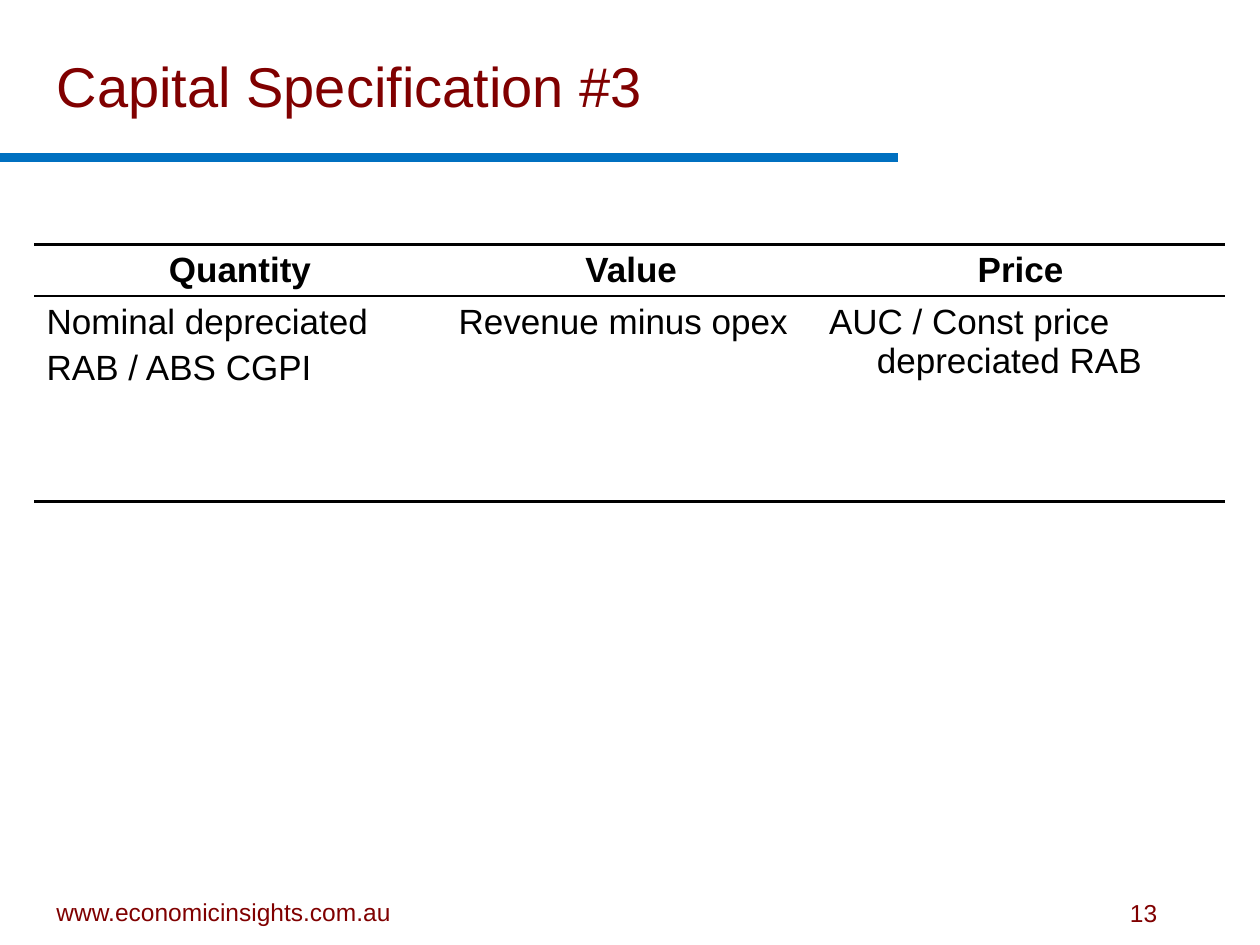
from lxml.etree import SubElement
from pptx import Presentation
from pptx.dml.color import RGBColor
from pptx.enum.shapes import MSO_CONNECTOR
from pptx.enum.text import MSO_ANCHOR, PP_ALIGN
from pptx.oxml import parse_xml
from pptx.oxml.ns import nsdecls, qn
from pptx.util import Inches, Pt

# Content
TITLE = "Capital Specification #3"
WEBSITE = "www.economicinsights.com.au"
PAGE_NUMBER = "13"
ROWS = [
    ["Quantity", "Value", "Price"],
    ["Nominal depreciated\nRAB / ABS CGPI", "Revenue minus opex",
     "AUC / Const price depreciated RAB"],
]
COLUMN_WIDTHS = [3.27, 2.94, 3.24]
ROW_HEIGHTS = [0.41, 1.63]

MAROON, BLUE, BLACK = "800000", "0070C0", "000000"
HANGING = 0.38


def style(paragraph, size, color, bold=False, align=PP_ALIGN.LEFT):
    paragraph.alignment = align
    font = paragraph.font
    font.name, font.size, font.bold = "Arial", Pt(size), bold
    font.color.rgb = RGBColor.from_string(color)


def add_footer(slide, text, box, anchor, align, wrap):
    frame = slide.shapes.add_textbox(*map(Inches, box)).text_frame
    frame.word_wrap = wrap
    frame.vertical_anchor = anchor
    frame.text = text
    style(frame.paragraphs[0], 14, MAROON, align=align)


def rule_cell(cell):
    """Black rules above and below, none at the sides."""
    rule = f'<a:solidFill><a:srgbClr val="{BLACK}"/></a:solidFill>'
    sides = {"lnL": "<a:noFill/>", "lnR": "<a:noFill/>", "lnT": rule, "lnB": rule}
    properties = cell._tc.get_or_add_tcPr()
    for position, (side, paint) in enumerate(sides.items()):
        properties.insert(position, parse_xml(
            f'<a:{side} {nsdecls("a")} w="{Pt(1.5)}">{paint}</a:{side}>'))


presentation = Presentation()
presentation.slide_width, presentation.slide_height = Inches(10), Inches(7.5)
slide = presentation.slides.add_slide(presentation.slide_layouts[5])

# Title and the bar under it
title = slide.shapes.title
title.left, title.top, title.width, title.height = map(Inches, (0.35, 0.36, 6.77, 0.63))
title.text_frame.text = TITLE
title.text_frame.vertical_anchor = MSO_ANCHOR.BOTTOM
style(title.text_frame.paragraphs[0], 32, MAROON)

bar = slide.shapes.add_connector(
    MSO_CONNECTOR.STRAIGHT, Inches(0), Inches(1.25), Inches(7.13), Inches(1.25))
bar.line.color.rgb = RGBColor.from_string(BLUE)
bar.line.width = Pt(5)
SubElement(bar._element.spPr, qn("a:effectLst"))

# Table
table = slide.shapes.add_table(
    len(ROWS), len(COLUMN_WIDTHS), Inches(0.27), Inches(1.94),
    Inches(sum(COLUMN_WIDTHS)), Inches(sum(ROW_HEIGHTS))).table
table.first_row = table.horz_banding = False
for column, width in zip(table.columns, COLUMN_WIDTHS):
    column.width = Inches(width)
for row, height in zip(table.rows, ROW_HEIGHTS):
    row.height = Inches(height)

for row_index, texts in enumerate(ROWS):
    is_header = row_index == 0
    for column_index, text in enumerate(texts):
        cell = table.cell(row_index, column_index)
        cell.text_frame.text = text
        cell.fill.background()
        rule_cell(cell)
        for line_index, paragraph in enumerate(cell.text_frame.paragraphs):
            indents = paragraph._p.get_or_add_pPr()
            indents.set("marL", str(Inches(HANGING)))
            indents.set("indent", str(-Inches(HANGING)))
            if line_index > 0:
                paragraph.space_before = Pt(4)
            style(paragraph, 20, BLACK, is_header,
                  PP_ALIGN.CENTER if is_header else PP_ALIGN.LEFT)

# Footer
add_footer(slide, WEBSITE, (0.2, 7.06, 3.15, 0.34), MSO_ANCHOR.BOTTOM, PP_ALIGN.CENTER, True)
add_footer(slide, PAGE_NUMBER, (8.87, 7.08, 0.44, 0.33), MSO_ANCHOR.TOP, PP_ALIGN.LEFT, False)

presentation.save("out.pptx")
